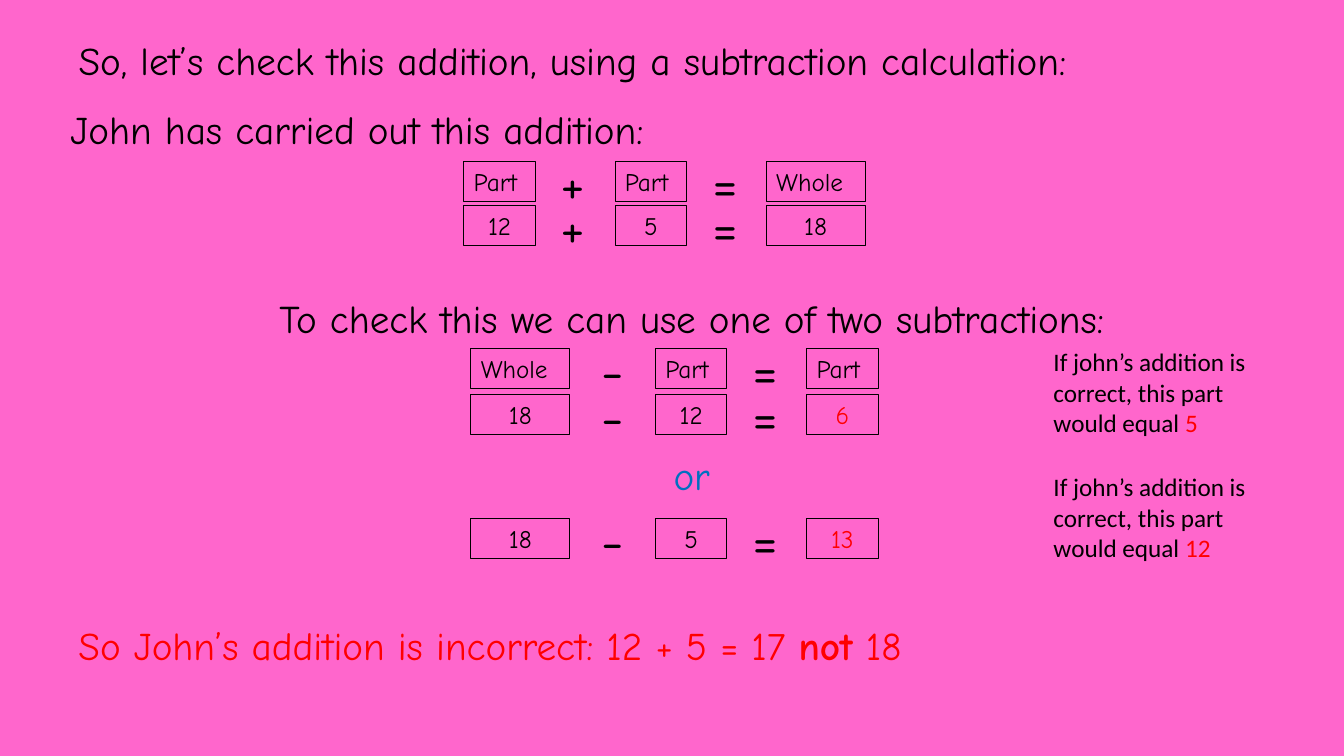
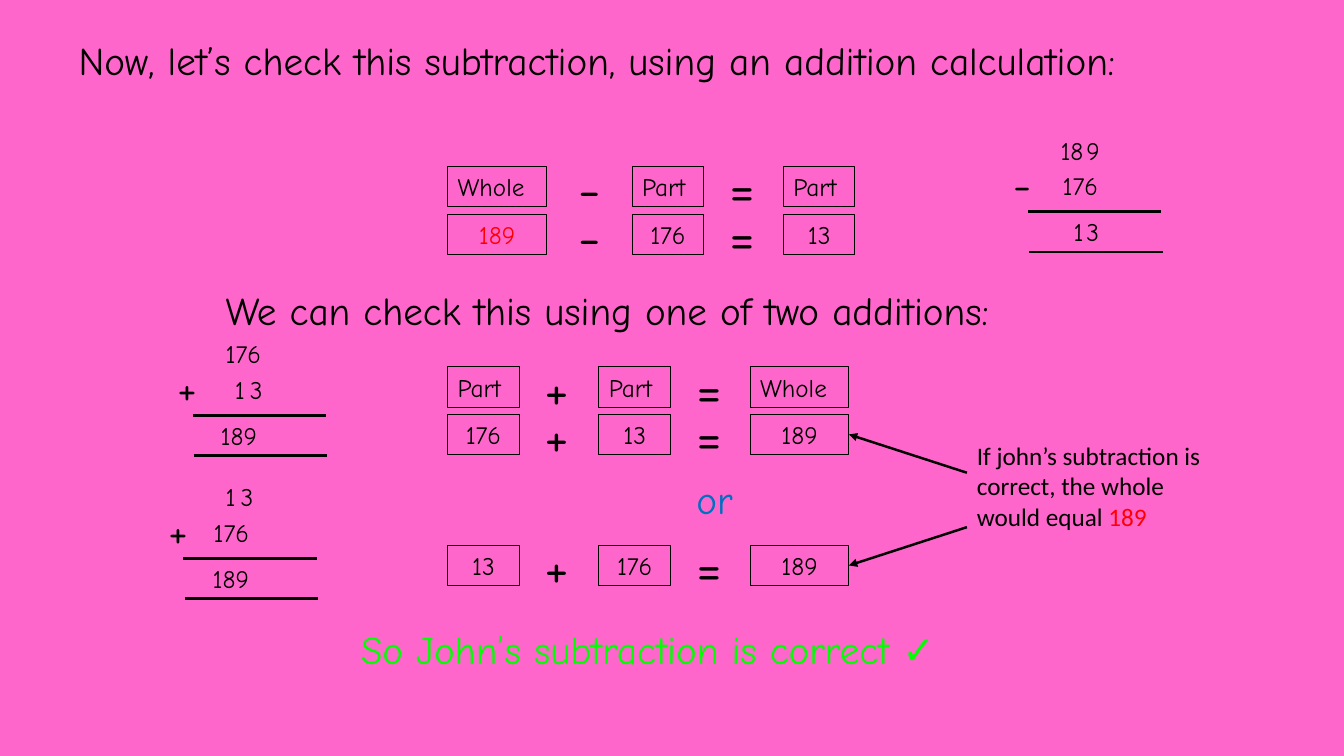
from dataclasses import dataclass

from lxml import etree
from pptx import Presentation
from pptx import util as u
from pptx.dml.color import RGBColor
from pptx.enum import shapes, text
from pptx.oxml import ns

PINK = RGBColor(0xFF, 0x66, 0xCC)
BLACK = RGBColor(0x00, 0x00, 0x00)
RED = RGBColor(0xFF, 0x00, 0x00)
BLUE = RGBColor(0x00, 0x70, 0xC0)
GREEN = RGBColor(0x00, 0xFF, 0x00)

HAND_FONT = "Comic Neue"
NOTE_FONT = "Calibri"

# Every length below counts cells of this grid.
CELL = u.Inches(0.1)
LINE_HEIGHT = 5.7
PART_WIDTH, WHOLE_WIDTH, BOX_HEIGHT = 7.1, 9.8, 4
GAP, GAP_AFTER_WHOLE = 7.9, 8.5
OPERATOR_WIDTH = 4.8
OPERATOR_LEAD = 6.35  # from an operator to the next box
OPERATOR_RISE = 1.85  # from the top of an operator to the top of its boxes


@dataclass(frozen=True)
class Run:
    text: str
    color: RGBColor = BLACK
    size: float | None = None
    bold: bool | None = None


@dataclass(frozen=True)
class Area:
    left: float
    top: float
    width: float
    height: float

    def lengths(self) -> tuple[int, int, int, int]:
        return tuple(cells(n) for n in (self.left, self.top, self.width, self.height))


@dataclass(frozen=True)
class Equation:
    """Three boxes joined by an operator and an equals sign."""
    left: float
    top: float
    operator: str
    terms: tuple[str, str, str]
    red_term: int | None = None


@dataclass(frozen=True)
class Digits:
    """A number of a column sum, moved right of the sum's upper rule."""
    shift: float
    runs: tuple[Run, ...]


@dataclass(frozen=True)
class ColumnSum:
    left: float
    rule_top: float
    operator: str
    first: Digits
    second: Digits
    result: Digits


def cells(count: float) -> int:
    return round(count * CELL)


def write(shape, runs: tuple[Run, ...], size: float, font: str = HAND_FONT,
          align=text.PP_ALIGN.LEFT) -> None:
    frame = shape.text_frame
    frame.word_wrap = True
    frame.auto_size = text.MSO_AUTO_SIZE.NONE
    frame.vertical_anchor = text.MSO_ANCHOR.TOP
    paragraph = frame.paragraphs[0]
    paragraph.alignment = align
    paragraph.font.name = font
    paragraph.font.size = u.Pt(size)
    for part in runs:
        run = paragraph.add_run()
        run.text = part.text
        run.font.color.rgb = part.color
        run.font.bold = part.bold
        if part.size:
            run.font.size = u.Pt(part.size)


def add_text(slide, area: Area, *runs: Run, size: float = 28, font: str = HAND_FONT,
             align=text.PP_ALIGN.LEFT) -> None:
    write(slide.shapes.add_textbox(*area.lengths()), runs, size, font, align)


def add_note(slide, left: float, top: float, words: str, answer: str) -> None:
    add_text(slide, Area(left, top, 25.5, 10.1), Run(words), Run(answer, RED),
             size=18, font=NOTE_FONT)


def add_line(slide, start: tuple[float, float], end: tuple[float, float],
             width: float, arrow: bool = False) -> None:
    line = slide.shapes.add_connector(
        shapes.MSO_CONNECTOR.STRAIGHT, *map(cells, start + end))
    line.line.color.rgb = BLACK
    line.line.width = u.Pt(width)
    if arrow:
        etree.SubElement(line.line._get_or_add_ln(), ns.qn("a:tailEnd"), type="triangle")
    etree.SubElement(line._element.spPr, ns.qn("a:effectLst"))


def add_box(slide, area: Area, term: str, color: RGBColor) -> None:
    box = slide.shapes.add_shape(shapes.MSO_SHAPE.RECTANGLE, *area.lengths())
    box.shadow.inherit = False
    box.fill.background()
    box.line.color.rgb = BLACK
    box.line.width = u.Pt(0.75)
    align = text.PP_ALIGN.CENTER if term.isdigit() else text.PP_ALIGN.LEFT
    write(box, (Run(term, color),), 18, align=align)


def add_equation(slide, equation: Equation) -> None:
    """An addition ends with its whole; a subtraction starts with it."""
    whole = 2 if equation.operator == "+" else 0
    left = equation.left
    for index, term in enumerate(equation.terms):
        if index:
            sign = equation.operator if index == 1 else "="
            add_text(slide, Area(left - OPERATOR_LEAD, equation.top - OPERATOR_RISE,
                                 OPERATOR_WIDTH, 7.7), Run(sign), size=40)
        width = WHOLE_WIDTH if index == whole else PART_WIDTH
        color = RED if index == equation.red_term else BLACK
        add_box(slide, Area(left, equation.top, width, BOX_HEIGHT), term, color)
        left += width + (GAP_AFTER_WHOLE if index == whole else GAP)


def add_column_sum(slide, column: ColumnSum) -> None:
    rows = ((column.first, -8.1), (column.second, -4.6), (column.result, 0))
    for digits, drop in rows:
        add_text(slide, Area(column.left + digits.shift, column.rule_top + drop,
                             WHOLE_WIDTH, BOX_HEIGHT), *digits.runs, size=18)
    add_text(slide, Area(column.left - 2.5, column.rule_top - 6, OPERATOR_WIDTH, 6.4),
             Run(column.operator), size=32)
    for shift, drop in ((0, 0), (0.1, 4)):
        left, top = column.left + shift, column.rule_top + drop
        add_line(slide, (left, top), (left + 13.2, top), 2)


def spaced(before: str, after: str, space: float) -> tuple[Run, ...]:
    """Digits set apart by a space of the given size."""
    return Run(before), Run(" ", size=space), Run(after)


def add_slide(presentation, title: str):
    slide = presentation.slides.add_slide(presentation.slide_layouts[5])
    heading = slide.shapes.title
    heading.left, heading.top, heading.width, heading.height = Area(
        6.8, 3.1, 125.2, LINE_HEIGHT).lengths()
    write(heading, (Run(title),), 28)
    return slide


def build_addition_check(presentation) -> None:
    slide = add_slide(presentation,
                      "So, let’s check this addition, using a subtraction calculation:")
    add_text(slide, Area(6, 10, 125.2, LINE_HEIGHT),
             Run("John has carried out this addition:"))
    for top, words, color in (
            (28.75, "To check this we can use one of two subtractions:", BLACK),
            (44.3, "or", BLUE)):
        add_text(slide, Area(6, top, 125.2, LINE_HEIGHT), Run(words, color),
                 align=text.PP_ALIGN.CENTER)
    for equation in (
            Equation(46, 16, "+", ("Part", "Part", "Whole")),
            Equation(46, 20.4, "+", ("12", "5", "18")),
            Equation(46.7, 34.55, "-", ("Whole", "Part", "Part")),
            Equation(46.7, 39.1, "-", ("18", "12", "6"), red_term=2),
            Equation(46.7, 51.4, "-", ("18", "5", "13"), red_term=2)):
        add_equation(slide, equation)
    for top, answer in ((33.9, "5"), (46.3, "12")):
        add_note(slide, 103.5, top,
                 "If john’s addition is correct, this part would equal ", answer)
    add_text(slide, Area(6.8, 61.1, 111.9, LINE_HEIGHT),
             Run("So John’s addition is incorrect: 12 + 5 = 17 ", RED),
             Run("not", RED, bold=True), Run(" 18", RED))


def build_subtraction_check(presentation) -> None:
    slide = add_slide(presentation,
                      "Now, let’s check this subtraction, using an addition calculation:")
    for left, top, words, color in (
            (21.4, 27.9, "We can check this using one of two additions:", BLACK),
            (68.1, 46.65, "or", BLUE),
            (34.8, 61.5, "So John’s subtraction is correct ✓", GREEN)):
        add_text(slide, Area(left, top, 133.33 - left, LINE_HEIGHT), Run(words, color))
    for equation in (
            Equation(44.4, 16.5, "-", ("Whole", "Part", "Part")),
            Equation(44.4, 21.3, "-", ("189", "176", "13"), red_term=0),
            Equation(44.4, 36.4, "+", ("Part", "Part", "Whole")),
            Equation(44.4, 41.1, "+", ("176", "13", "189")),
            Equation(44.4, 54.1, "+", ("13", "176", "189"))):
        add_equation(slide, equation)
    add_note(slide, 95.9, 43.2,
             "If john’s subtraction is correct, the whole would equal ", "189")
    for start, end in ((46.9, 43.1), (52.3, 56.1)):
        add_line(slide, (95.9, start), (84.2, end), 1.75, arrow=True)
    for column in (
            ColumnSum(19.1, 41.2, "+", Digits(2.3, (Run("176"),)),
                      Digits(3.2, spaced("1", "3", 11)), Digits(1.8, (Run("189"),))),
            ColumnSum(18.2, 55.4, "+", Digits(3.2, spaced("1", "3", 10.5)),
                      Digits(2, (Run("176"),)), Digits(1.9, (Run("189"),))),
            ColumnSum(102, 21, "-", Digits(2.2, spaced("18", "9", 6)),
                      Digits(2.4, (Run("176"),)), Digits(3.5, spaced("1", "3", 6)))):
        add_column_sum(slide, column)


def main() -> None:
    presentation = Presentation()
    presentation.slide_width = u.Inches(13.33)
    presentation.slide_height = u.Inches(7.5)
    background = presentation.slide_master.background.fill
    background.solid()
    background.fore_color.rgb = PINK
    build_addition_check(presentation)
    build_subtraction_check(presentation)
    presentation.save("out.pptx")


if __name__ == "__main__":
    main()
